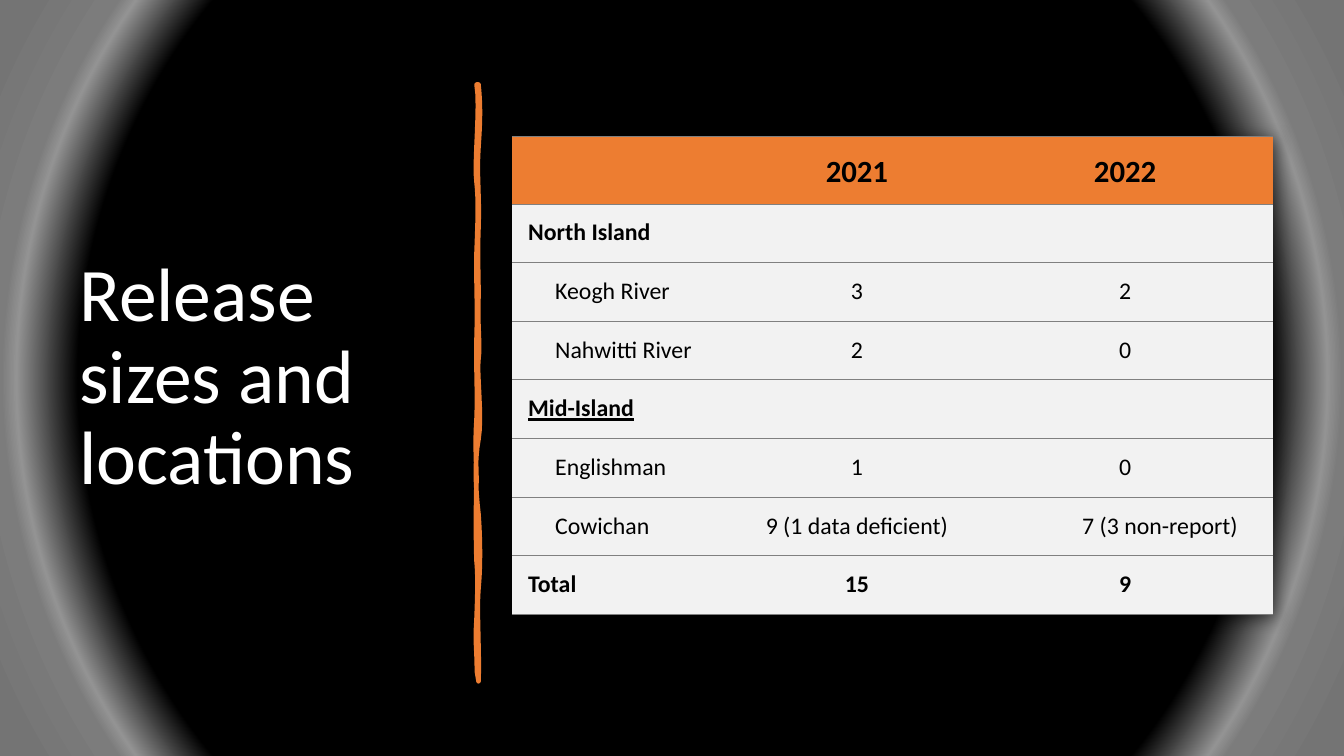
from dataclasses import dataclass

import pptx
import pptx.dml.color
import pptx.enum.text
import pptx.oxml
import pptx.oxml.ns
import pptx.util

Cm = pptx.util.Cm
Pt = pptx.util.Pt
ALIGN = pptx.enum.text.PP_ALIGN
ANCHOR = pptx.enum.text.MSO_ANCHOR
NAMESPACES = pptx.oxml.ns.nsdecls("a", "p")


@dataclass(frozen=True)
class Theme:
    font: str = "Calibri"
    accent: str = "ED7D31"
    title: str = "FFFFFF"
    ink: str = "000000"
    body: str = "F2F2F2"
    rule: str = "808080"
    title_size: int = 54
    header_size: int = 22
    body_size: int = 17
    backdrop: tuple = ((77, "000000"), (85, "939393"), (87, "7C7C7C"), (97, "747474"))


THEME = Theme()

# Brush edges as curves: two control points (x from the edge, y), then the end y; in cm.
RIGHT_EDGE = (
    (0.05, 0.46, 0.05, 0.89, 1.58), (-0.05, 2.26, 0.03, 2.82, 3.61),
    (-0.03, 4.4, 0, 4.52, 5.34), (-0.03, 6.13, 0.05, 6.56, 6.91),
    (-0.05, 7.27, 0.1, 8.39, 8.94), (-0.1, 9.48, -0.08, 10.16, 10.82),
    (0.05, 11.48, 0.05, 12.2, 12.7), (-0.05, 13.19, 0.03, 14.38, 15.04),
)
LEFT_EDGE = (
    (0.03, 14.28, -0.05, 14.23, 13.44), (0.03, 12.68, 0.03, 12.35, 12.02),
    (-0.02, 11.69, -0.02, 10.44, 9.99), (0, 9.53, -0.05, 9.17, 8.41),
    (0.03, 7.67, -0.02, 7.34, 6.38), (0.03, 5.44, -0.02, 5.01, 4.22),
    (0.03, 3.41, 0.05, 2.95, 2.47), (-0.07, 2.01, 0.1, 0.51, 0),
)

HEADER = ("", "2021", "2022")
GROUPS = ("North Island", "Mid-Island")
UNDERLINED = "Mid-Island"
TOTAL = "Total"
SHIFTED = "7 (3 non-report)"
RELEASES = (
    ("North Island", "", ""),
    ("Keogh River", "3", "2"),
    ("Nahwitti River", "2", "0"),
    ("Mid-Island", "", ""),
    ("Englishman", "1", "0"),
    ("Cowichan", "9 (1 data deficient)", SHIFTED),
    (TOTAL, "15", "9"),
)


def color(value):
    return pptx.dml.color.RGBColor.from_string(value)


def add_span(para, text, size, ink, bold=False, underline=False):
    span = para.add_run()
    span.text = text
    span.font.name = THEME.font
    span.font.size = Pt(size)
    span.font.color.rgb = color(ink)
    span.font.bold = bold
    span.font.underline = underline


def paint_backdrop(page):
    """Fill the page with a circular gradient, dark in the middle."""
    stops = "".join(
        f'<a:gs pos="{place * 1000}"><a:srgbClr val="{value}"/></a:gs>'
        for place, value in THEME.backdrop
    )
    page.element.cSld.insert(0, pptx.oxml.parse_xml(
        f'<p:bg {NAMESPACES}><p:bgPr><a:gradFill rotWithShape="1"><a:gsLst>{stops}</a:gsLst>'
        '<a:path path="circle"><a:fillToRect l="50000" t="50000" r="50000" b="50000"/></a:path>'
        '</a:gradFill><a:effectLst/></p:bgPr></p:bg>'
    ))


def add_title(page, left, top, width, height):
    box = page.shapes.add_textbox(Cm(left), Cm(top), Cm(width), Cm(height))
    frame = box.text_frame
    frame.word_wrap = True
    frame.vertical_anchor = ANCHOR.MIDDLE
    para = frame.paragraphs[0]
    para.line_spacing = 0.9
    add_span(para, "Release sizes and locations", THEME.title_size, THEME.title)


def edge_points(edge_x, start_y, curves, steps=8):
    """Points along a chain of cubic curves that returns to edge_x at each knot."""
    points = []
    for first_x, first_y, second_x, second_y, end_y in curves:
        for step in range(1, steps + 1):
            t = step / steps
            near, far = 3 * t * (1 - t) ** 2, 3 * t ** 2 * (1 - t)
            x = edge_x + near * first_x + far * second_x
            y = (1 - t) ** 3 * start_y + near * first_y + far * second_y + t ** 3 * end_y
            points.append((x, y))
        start_y = end_y
    return points


def add_brush_stroke(page, left, top, width, height):
    outline = edge_points(width, 0, RIGHT_EDGE) + edge_points(0, height, LEFT_EDGE)
    builder = page.shapes.build_freeform(Cm(left + width), Cm(top))
    builder.add_line_segments([(Cm(left + x), Cm(top + y)) for x, y in outline], close=True)
    stroke = builder.convert_to_shape()
    stroke.shadow.inherit = False
    stroke.fill.solid()
    stroke.fill.fore_color.rgb = color(THEME.accent)
    stroke.line.color.rgb = color(THEME.accent)
    stroke.line.width = Pt(3.25)


def style_cell(cell, fill, sides):
    cell.margin_left = cell.margin_right = Cm(0.41)
    cell.margin_top, cell.margin_bottom = Cm(0.36), Cm(0.28)
    cell.fill.solid()
    cell.fill.fore_color.rgb = color(fill)
    properties = cell._tc.get_or_add_tcPr()
    for place, side in enumerate(sides):
        properties.insert(place, pptx.oxml.parse_xml(
            f'<a:ln{side} {NAMESPACES} w="{Pt(0.75)}"><a:solidFill>'
            f'<a:srgbClr val="{THEME.rule}"/></a:solidFill></a:ln{side}>'
        ))


def indent(para, length):
    para._p.get_or_add_pPr().set("marL", str(Cm(length)))


def fill_header(table):
    for cell, year in zip(table.rows[0].cells, HEADER):
        style_cell(cell, THEME.accent, "TB")
        cell.vertical_anchor = ANCHOR.MIDDLE
        if year:
            para = cell.text_frame.paragraphs[0]
            para.alignment = ALIGN.CENTER
            add_span(para, year, THEME.header_size, THEME.ink, bold=True)


def fill_release(row, values):
    label = values[0]
    bold = label in GROUPS or label == TOTAL
    for column, (cell, text) in enumerate(zip(row.cells, values)):
        style_cell(cell, THEME.body, "TB")
        if not text:
            continue
        para = cell.text_frame.paragraphs[0]
        if column:
            para.alignment = ALIGN.CENTER
        if text == SHIFTED:
            indent(para, 1.76)
        elif not column and not bold:
            indent(para, 0.68)
        add_span(para, text, THEME.body_size, THEME.ink, bold, text == UNDERLINED)


def add_release_table(page, left, top, width, height):
    rows = len(RELEASES) + 1
    table = page.shapes.add_table(
        rows, len(HEADER), Cm(left), Cm(top), Cm(width), Cm(height)).table
    table.first_row = table.horz_banding = False
    properties = table._tbl.tblPr
    style = properties.find(pptx.oxml.ns.qn("a:tableStyleId"))
    style.text = "{2D5ABB26-0587-4C30-8999-92F81FD0307C}"
    properties.insert(0, pptx.oxml.parse_xml(
        f'<a:effectLst {NAMESPACES}><a:outerShdw blurRad="{Cm(0.4)}" dist="{Cm(0.1)}" '
        'dir="2700000"><a:srgbClr val="000000"><a:alpha val="50000"/></a:srgbClr>'
        '</a:outerShdw></a:effectLst>'
    ))
    first, second = 5.66, 6.07
    for column, size in zip(table.columns, (first, second, width - first - second)):
        column.width = Cm(size)
    header_height = 1.69
    for row in table.rows:
        row.height = Cm((height - header_height) / len(RELEASES))
    table.rows[0].height = Cm(header_height)
    fill_header(table)
    for position, values in enumerate(RELEASES, start=1):
        fill_release(table.rows[position], values)


def main():
    deck = pptx.Presentation()
    deck.slide_width, deck.slide_height = Cm(33.87), Cm(19.05)
    page = deck.slides.add_slide(deck.slide_layouts[6])
    paint_backdrop(page)
    add_title(page, 1.75, 1.78, 9.5, 15.52)
    add_brush_stroke(page, 12.01, 2.13, 0.05, 15.04)
    add_release_table(page, 12.9, 3.45, 19.18, 12.04)
    deck.save("out.pptx")


if __name__ == "__main__":
    main()
